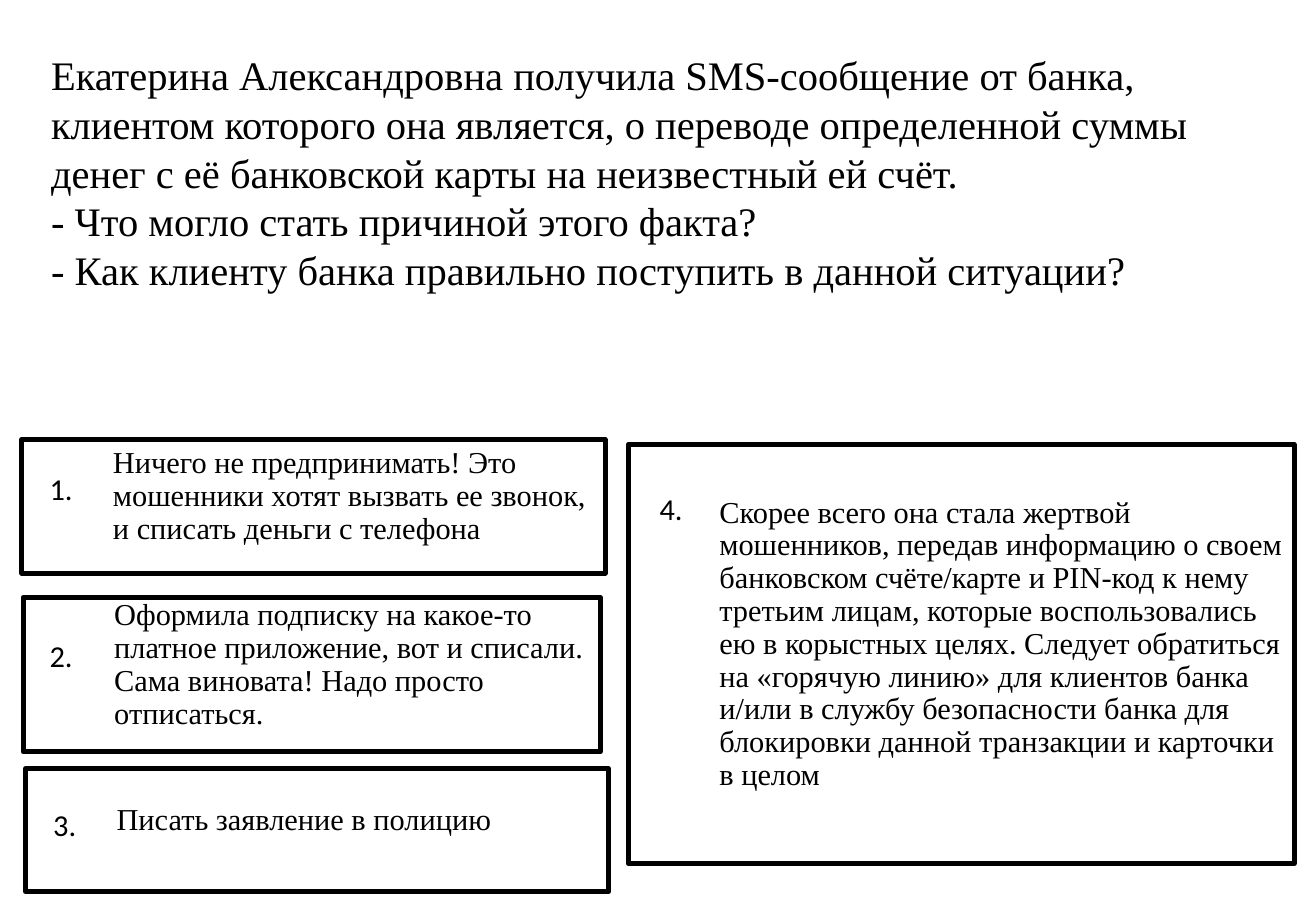
from dataclasses import dataclass

from pptx import Presentation
from pptx.dml.color import RGBColor
from pptx.enum.shapes import MSO_SHAPE
from pptx.enum.text import MSO_ANCHOR, MSO_AUTO_SIZE, PP_ALIGN
from pptx.util import Inches, Pt


@dataclass(frozen=True)
class Theme:
    ink: RGBColor = RGBColor(0, 0, 0)
    paper: RGBColor = RGBColor(255, 255, 255)
    text_font: str = "Times New Roman"
    number_font: str = "Calibri"
    title_size: int = 24
    answer_size: int = 18
    border: int = 3


QUESTION = (
    "Екатерина Александровна получила SMS-сообщение от банка, клиентом которого "
    "она является, о переводе определенной суммы денег с её банковской карты на "
    "неизвестный ей счёт.\v"
    "- Что могло стать причиной этого факта?\v"
    "- Как клиенту банка правильно поступить в данной ситуации?"
)

ANSWERS = [
    ("Ничего не предпринимать! Это мошенники хотят вызвать ее звонок, и списать "
     "деньги с телефона",
     (0.18, 3.62, 4.8, 1.1), (0.31, 3.82)),
    ("Оформила подписку на какое-то платное приложение, вот и списали. "
     "Сама виновата! Надо просто отписаться.",
     (0.19, 4.92, 4.75, 1.27), (0.31, 5.2)),
    ("Писать заявление в полицию",
     (0.21, 6.33, 4.8, 1.01), (0.34, 6.59)),
    ("Скорее всего она стала жертвой мошенников, передав информацию о своем "
     "банковском счёте/карте и PIN-код к нему третьим лицам, которые "
     "воспользовались ею в корыстных целях. Следует обратиться на «горячую "
     "линию» для клиентов банка и/или в службу безопасности банка для "
     "блокировки данной транзакции и карточки в целом",
     (5.17, 3.66, 5.48, 3.45), (5.33, 3.99)),
]


class QuizSlide:
    """Draws the parts of a quiz slide in one theme."""

    def __init__(self, prs, theme):
        self.theme = theme
        self.slide = prs.slides.add_slide(prs.slide_layouts[5])

    def set_text(self, tf, text, font, size):
        tf.word_wrap = True
        p = tf.paragraphs[0]
        p.text = text
        p.alignment = PP_ALIGN.LEFT
        p.font.name = font
        p.font.size = Pt(size)
        p.font.color.rgb = self.theme.ink
        return p

    def title(self, text, box):
        sp = self.slide.shapes.title
        sp.left, sp.top, sp.width, sp.height = map(Inches, box)
        sp.fill.solid()
        sp.fill.fore_color.rgb = self.theme.paper
        tf = sp.text_frame
        tf.auto_size = MSO_AUTO_SIZE.NONE
        tf.vertical_anchor = MSO_ANCHOR.MIDDLE
        self.set_text(tf, text, self.theme.text_font, self.theme.title_size)

    def answer(self, text, box):
        sp = self.slide.shapes.add_shape(MSO_SHAPE.RECTANGLE, *map(Inches, box))
        sp.shadow.inherit = False
        sp.fill.solid()
        sp.fill.fore_color.rgb = self.theme.paper
        sp.line.color.rgb = self.theme.ink
        sp.line.width = Pt(self.theme.border)
        tf = sp.text_frame
        tf.vertical_anchor = MSO_ANCHOR.MIDDLE
        tf.margin_left, tf.margin_bottom = Inches(0.75), Inches(0.16)
        tf.margin_top = tf.margin_right = Inches(0)
        p = self.set_text(tf, text, self.theme.text_font, self.theme.answer_size)
        p.line_spacing = 0.9

    def number(self, value, left, top):
        sp = self.slide.shapes.add_textbox(*map(Inches, (left, top, 0.47, 0.4)))
        tf = sp.text_frame
        self.set_text(tf, f"{value}.", self.theme.number_font, self.theme.answer_size)
        tf.auto_size = MSO_AUTO_SIZE.SHAPE_TO_FIT_TEXT


def main():
    prs = Presentation()
    prs.slide_width, prs.slide_height = Inches(10.83), Inches(7.5)
    quiz = QuizSlide(prs, Theme())
    quiz.title(QUESTION, (0.32, 0.33, 10.25, 2.17))
    for value, (text, box, spot) in enumerate(ANSWERS, 1):
        quiz.answer(text, box)
        quiz.number(value, *spot)
    prs.save("out.pptx")


if __name__ == "__main__":
    main()
